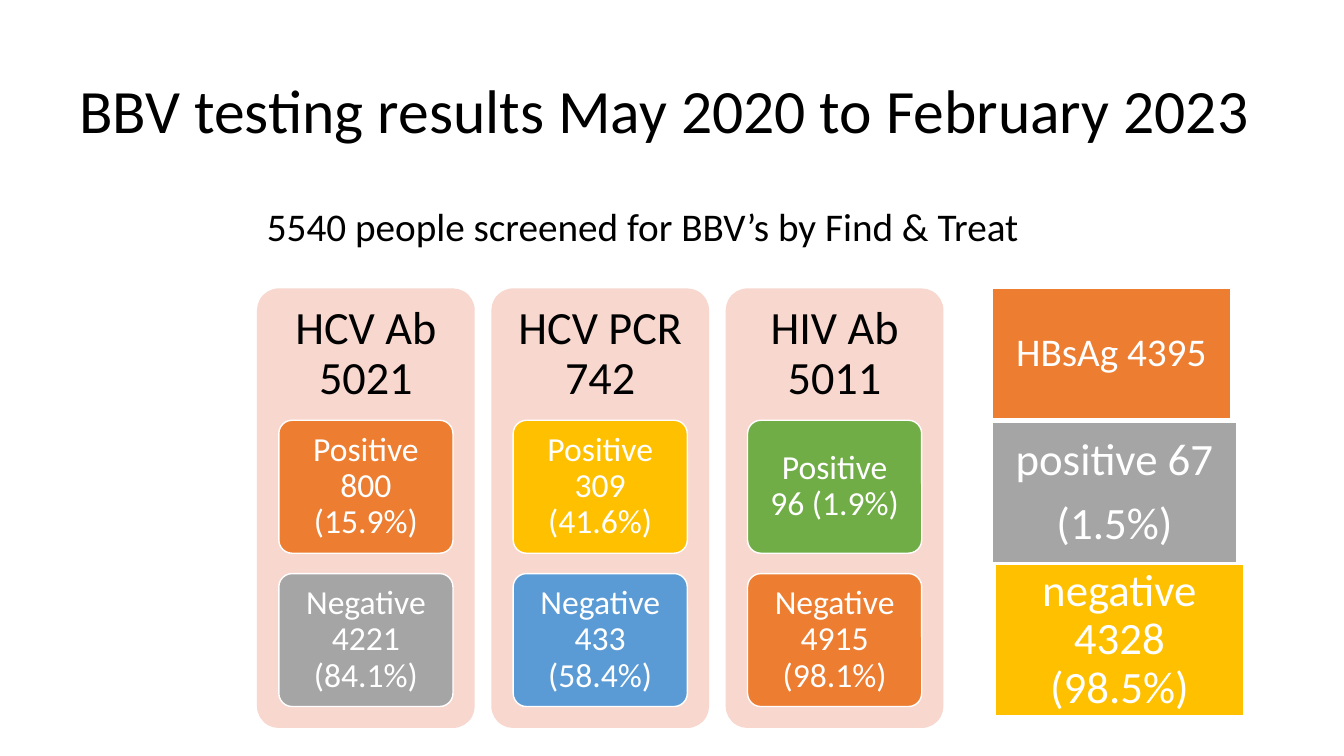
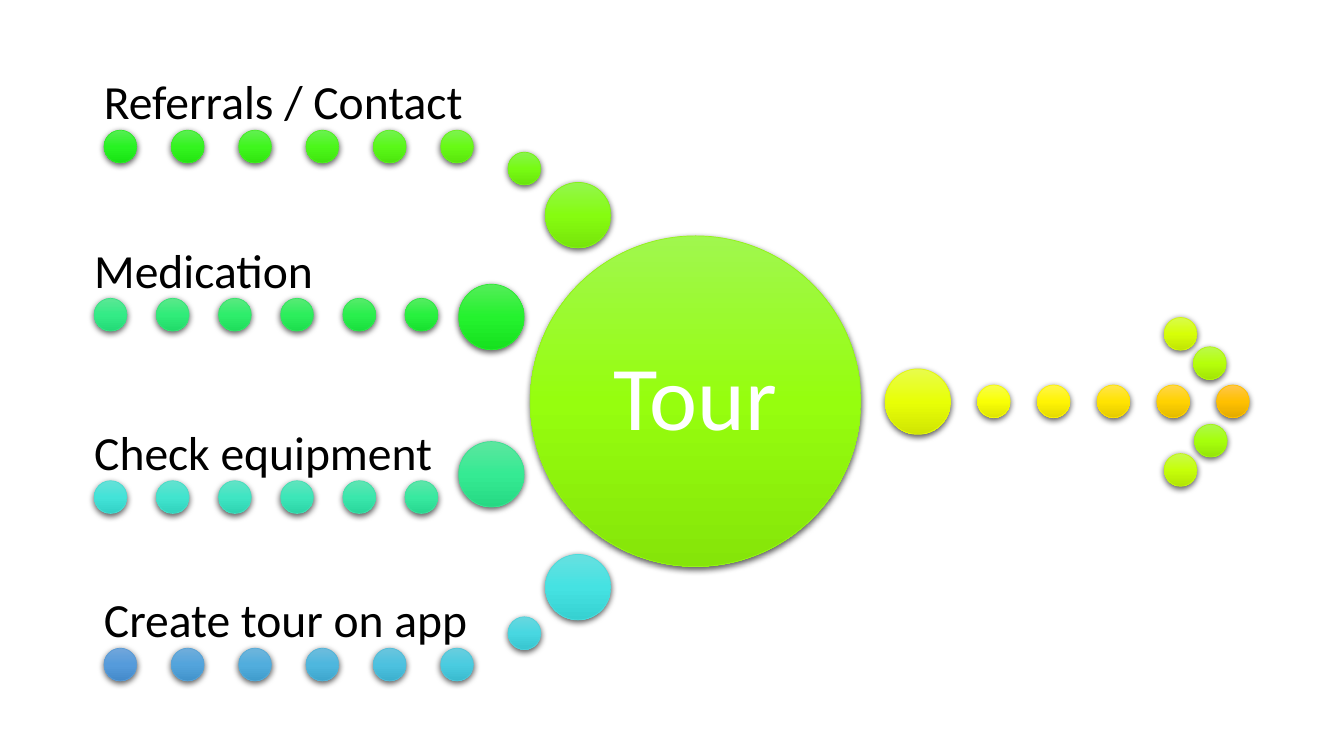
from colorsys import hls_to_rgb, rgb_to_hls
from dataclasses import dataclass

from lxml.etree import SubElement
from pptx import Presentation
from pptx.dml.color import RGBColor
from pptx.enum.shapes import MSO_SHAPE as Preset
from pptx.enum.text import MSO_ANCHOR as Anchor, PP_ALIGN as Align
from pptx.oxml.ns import qn
from pptx.util import Pt

FONT = "Calibri"
COLORS = {
    "black": "000000",
    "white": "FFFFFF",
    "panel": "F8D7CE",
    "orange": "ED7D31",
    "grey": "A5A5A5",
    "gold": "FFC000",
    "blue": "5B9BD5",
    "green": "70AD47",
}
GAMMA = 2.3
SMALL, LARGE = 23.4, 46.8
LABEL_HEIGHT = 58.3


@dataclass(frozen=True)
class Area:
    left: float
    top: float
    width: float
    height: float

    def lengths(self) -> list:
        return [Pt(v) for v in (self.left, self.top, self.width, self.height)]


@dataclass(frozen=True)
class TextStyle:
    size: float
    color: str = "white"
    align: Align = Align.CENTER
    anchor: Anchor = Anchor.MIDDLE
    inset: tuple = (0, 0)
    space_after: float = 0


@dataclass(frozen=True)
class Cell:
    text: str
    color: str


@dataclass(frozen=True)
class Panel:
    heading: str
    cells: tuple


@dataclass(frozen=True)
class Block:
    area: Area
    text: str
    color: str
    style: TextStyle


@dataclass(frozen=True)
class Dot:
    left: float
    top: float
    size: float = SMALL


@dataclass(frozen=True)
class Step:
    text: str
    left: float
    top: float
    pitch: float
    width: float
    leading: tuple


TITLE = TextStyle(44, "black", Align.LEFT, inset=(7.2, 3.6))
BULLET = TextStyle(28, "black", Align.LEFT, Anchor.TOP, (7.2, 3.6))
HEADING = TextStyle(33, "black", inset=(10, 10))
CELL = TextStyle(24, inset=(5, 3.6))
BLOCK_SMALL = TextStyle(28, inset=(6, 6))
BLOCK_LARGE = TextStyle(32, inset=(6.5, 6.5), space_after=11)
TOUR = TextStyle(65, inset=(6.5, 6.5))
LABEL = TextStyle(34, "black", Align.LEFT, Anchor.BOTTOM)

PANELS = (
    Panel("HCV Ab 5021", (Cell("Positive 800 (15.9%)", "orange"),
                          Cell("Negative 4221 (84.1%)", "grey"))),
    Panel("HCV PCR 742", (Cell("Positive 309 (41.6%)", "gold"),
                          Cell("Negative 433 (58.4%)", "blue"))),
    Panel("HIV Ab 5011", (Cell("Positive\v96 (1.9%)", "green"),
                          Cell("Negative 4915 (98.1%)", "orange"))),
)
BLOCKS = (
    Block(Area(708.5, 206, 170.6, 92.9), "HBsAg 4395", "orange", BLOCK_SMALL),
    Block(Area(708.8, 301.7, 174.6, 100.5), "positive 67\n(1.5%)", "grey", BLOCK_LARGE),
    Block(Area(710.6, 403.4, 178, 107.7), "negative 4328 (98.5%)", "gold", BLOCK_LARGE),
)
ARROW = (
    *(Dot(869 - 42.7 * i, 275) for i in range(5)),
    Dot(632.2, 263.5, LARGE),
    Dot(831.6, 226.8),
    Dot(831.6, 324),
    Dot(852.5, 247.7),
    Dot(853.2, 303.1),
)
HUB = Dot(378.7, 168.5, 236.2)
STEPS = (
    Step("Referrals / Contact", 74.3, 93, 48.1, 263.5,
         (Dot(389.5, 130.3, LARGE), Dot(362.9, 108.7))),
    Step("Medication", 67.3, 213.1, 44.4, 245.5, (Dot(327.6, 203, LARGE),)),
    Step("Check equipment", 67.3, 343.4, 44.4, 245.5, (Dot(327.6, 315.4, LARGE),)),
    Step("Create tour on app", 74.3, 463, 48.1, 263.5,
         (Dot(389.5, 396, LARGE), Dot(362.9, 440.6))),
)
STEP_DOTS = 6


def write(shape, text: str, style: TextStyle) -> None:
    frame = shape.text_frame
    frame.word_wrap = True
    frame.vertical_anchor = style.anchor
    frame.margin_left = frame.margin_right = Pt(style.inset[0])
    frame.margin_top = frame.margin_bottom = Pt(style.inset[1])
    frame.text = text
    for para in frame.paragraphs:
        para.alignment = style.align
        para.line_spacing = 0.9
        para.space_after = Pt(style.space_after)
        para.font.name = FONT
        para.font.size = Pt(style.size)
        para.font.color.rgb = RGBColor.from_string(COLORS[style.color])


def add_text(page, area: Area, text: str, style: TextStyle):
    box = page.shapes.add_textbox(*area.lengths())
    write(box, text, style)
    return box


def add_bullet(page, area: Area, text: str) -> None:
    box = page.shapes.add_textbox(*area.lengths())
    properties = box.text_frame.paragraphs[0]._p.get_or_add_pPr()
    properties.set("marL", str(Pt(18)))
    properties.set("indent", str(-Pt(18)))
    SubElement(properties, qn("a:buFont")).set("typeface", "Arial")
    SubElement(properties, qn("a:buChar")).set("char", "•")
    write(box, text, BULLET)


def add_filled(page, preset: Preset, area: Area, color: str, outlined: bool = True):
    shape = page.shapes.add_shape(preset, *area.lengths())
    shape.shadow.inherit = False
    shape.fill.solid()
    shape.fill.fore_color.rgb = RGBColor.from_string(COLORS[color])
    if outlined:
        shape.line.color.rgb = RGBColor.from_string(COLORS["white"])
        shape.line.width = Pt(1)
    else:
        shape.line.fill.background()
    if preset == Preset.ROUNDED_RECTANGLE:
        shape.adjustments[0] = 0.1
    return shape


def add_panel(page, panel: Panel, left: float) -> None:
    top, width = 206, 155.5
    add_filled(page, Preset.ROUNDED_RECTANGLE, Area(left, top, width, 314), "panel", False)
    add_text(page, Area(left, top, width, 94.3), panel.heading, HEADING)
    for row, cell in enumerate(panel.cells):
        area = Area(left + 15.55, 300.2 + 109.5 * row, 124.4, 95)
        write(add_filled(page, Preset.ROUNDED_RECTANGLE, area, cell.color), cell.text, CELL)


def to_hls(color: str) -> tuple:
    return rgb_to_hls(*(channel / 255 for channel in RGBColor.from_string(color)))


def shade_of(hls: tuple, lum: float, sat: float, scale: float, lift: float) -> RGBColor:
    hue, light, saturation = hls
    channels = hls_to_rgb(hue, light * lum, min(1, saturation * sat))
    return RGBColor(*(
        round(255 * (max(0, c) ** GAMMA * scale + lift) ** (1 / GAMMA)) if c < 1
        else round(255 * (scale + lift) ** (1 / GAMMA))
        for c in channels
    ))


def add_dot(page, dot: Dot, position: float):
    start, end = to_hls(COLORS["gold"]), to_hls(COLORS["blue"])
    hls = tuple(a + (b - a) * position for a, b in zip(start, end))
    area = Area(dot.left, dot.top, dot.size, dot.size)
    shape = page.shapes.add_shape(Preset.OVAL, *area.lengths())
    shape.line.color.rgb = shade_of(hls, 1, 1, 1, 0)
    shape.line.width = Pt(0.5)
    shape.fill.background()
    shape.shadow.inherit = False

    properties = shape._element.spPr
    gradient = properties.find(qn("a:noFill"))
    gradient_fill = SubElement(properties, qn("a:gradFill"))
    properties.replace(gradient, gradient_fill)
    stops = SubElement(gradient_fill, qn("a:gsLst"))
    tones = ((0, 1.02, 1.03, 0.94, 0.06), (50000, 1, 1.1, 1, 0), (100000, 0.99, 1.2, 0.78, 0))
    for place, *change in tones:
        stop = SubElement(stops, qn("a:gs"), pos=str(place))
        SubElement(stop, qn("a:srgbClr"), val=str(shade_of(hls, *change)))
    SubElement(gradient_fill, qn("a:lin"), ang="5400000", scaled="0")

    effects = properties.find(qn("a:effectLst"))
    shadow = SubElement(effects, qn("a:outerShdw"), blurRad=str(Pt(4.5)), dist=str(Pt(1.5)),
                        dir="5400000", algn="ctr", rotWithShape="0")
    tint = SubElement(shadow, qn("a:srgbClr"), val=COLORS["black"])
    SubElement(tint, qn("a:alpha"), val="63000")
    return shape


def build_results(page) -> None:
    add_text(page, Area(49.5, 28.8, 858.5, 104.4),
             "BBV testing results May 2020 to February 2023", TITLE)
    add_bullet(page, Area(183.6, 144.7, 698.4, 51.8),
               "5540 people screened for BBV’s by Find & Treat")
    for column, panel in enumerate(PANELS):
        add_panel(page, panel, 183.6 + 167.4 * column)
    for block in BLOCKS:
        shape = add_filled(page, Preset.RECTANGLE, block.area, block.color)
        write(shape, block.text, block.style)


def build_tour(page) -> None:
    dots = [*ARROW, HUB]
    for step in STEPS:
        dots += step.leading
        dots += [Dot(step.left + step.pitch * i, step.top) for i in reversed(range(STEP_DOTS))]
    for index, dot in enumerate(dots):
        shape = add_dot(page, dot, index / (len(dots) - 1))
        if dot is HUB:
            write(shape, "Tour", TOUR)
    for step in STEPS:
        area = Area(step.left, step.top - LABEL_HEIGHT, step.width, LABEL_HEIGHT)
        add_text(page, area, step.text, LABEL)


def main() -> None:
    deck = Presentation()
    deck.slide_width, deck.slide_height = Pt(960), Pt(540)
    for build in (build_results, build_tour):
        build(deck.slides.add_slide(deck.slide_layouts[6]))
    deck.save("out.pptx")


if __name__ == "__main__":
    main()
